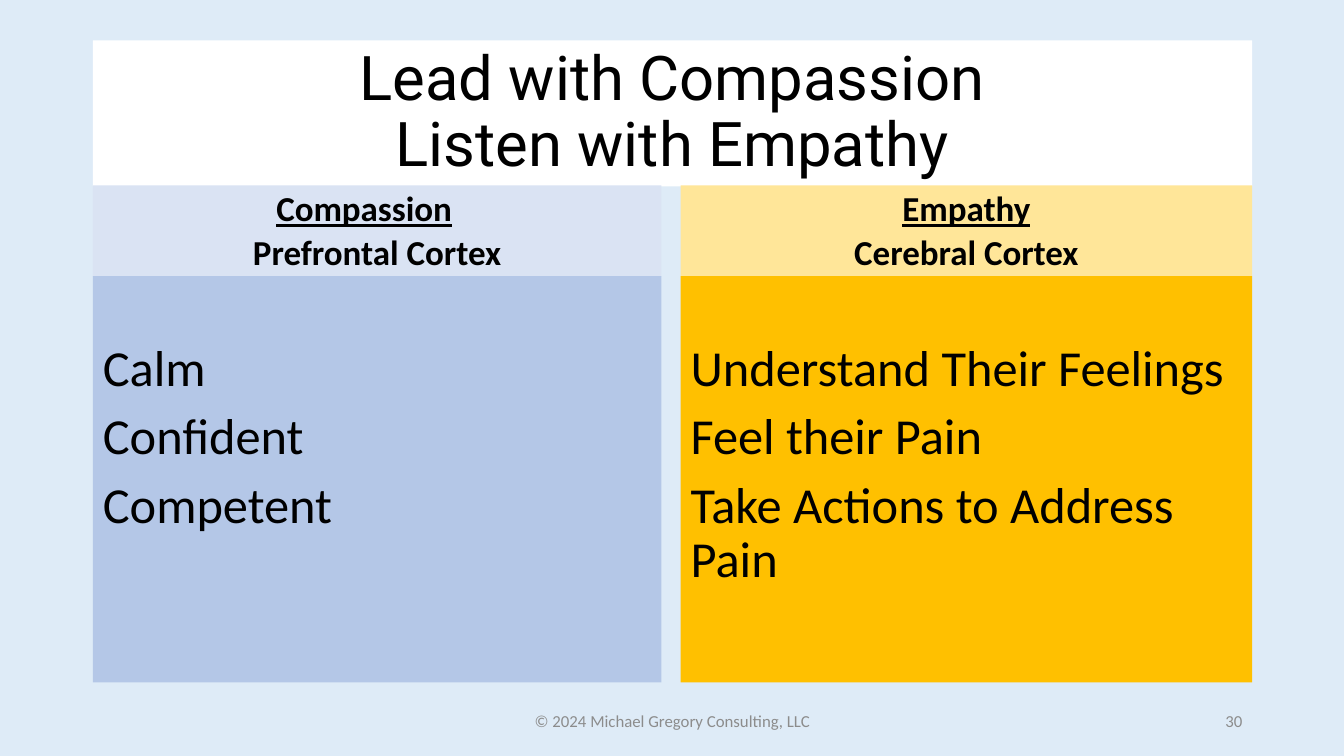
from dataclasses import dataclass

from lxml import etree
from pptx import Presentation
from pptx.dml.color import RGBColor
from pptx.enum.text import MSO_ANCHOR, MSO_AUTO_SIZE, PP_ALIGN
from pptx.oxml.ns import qn
from pptx.util import Inches, Pt

LEFT, CENTER, RIGHT = PP_ALIGN.LEFT, PP_ALIGN.CENTER, PP_ALIGN.RIGHT
TOP, MIDDLE, BOTTOM = MSO_ANCHOR.TOP, MSO_ANCHOR.MIDDLE, MSO_ANCHOR.BOTTOM
NO_FIT = MSO_AUTO_SIZE.NONE
COMPARE = 4  # layout with a title and two headed columns


@dataclass(frozen=True)
class Theme:
    back: str = "DEEBF7"
    white: str = "FFFFFF"
    ink: str = "000000"
    gray: str = "8C8C8C"
    blues: tuple = ("DAE3F3", "B4C7E7")
    golds: tuple = ("FFE699", "FFC000")
    title: int = 44
    head: int = 25
    body: int = 36
    foot: int = 12
    face: str = "Calibri"
    title_face: str = "Roboto"


THEME = Theme()

# Column: left, width, fills, heading lines, list items
COLUMNS = (
    (0.92, 5.64, THEME.blues, ("Compassion\t", "Prefrontal Cortex"),
     ("Calm", "Confident", "Competent")),
    (6.75, 5.67, THEME.golds, ("Empathy", "Cerebral Cortex"),
     ("Understand Their Feelings", "Feel their Pain",
      "Take Actions to Address Pain")),
)


def paint(item, color):
    item.fill.solid()
    item.fill.fore_color.rgb = RGBColor.from_string(color)


def place(shape, left, top, width, height):
    shape.left, shape.top = Inches(left), Inches(top)
    shape.width, shape.height = Inches(width), Inches(height)


def plain(para):
    """Drop the bullet and the hanging indent."""
    props = para._p.get_or_add_pPr()
    props.set("marL", "0")
    props.set("indent", "0")
    etree.SubElement(props, qn("a:buNone"))


def write(shape, lines, size, color=THEME.ink, face=THEME.face, align=LEFT,
          anchor=TOP, bold=False, under=False, pitch=1.0, gap=0, inset=0.05):
    """Fill a shape with paragraphs; under marks the first one only."""
    frame = shape.text_frame
    frame.word_wrap = True
    frame.auto_size = NO_FIT
    frame.vertical_anchor = anchor
    frame.margin_top = Inches(inset)
    for i, line in enumerate(lines):
        para = frame.add_paragraph() if i else frame.paragraphs[0]
        plain(para)
        para.text = line
        para.alignment = align
        para.line_spacing = pitch
        para.space_before = Pt(gap if i else 0)
        for run in para.runs:
            font = run.font
            font.name, font.size, font.bold = face, Pt(size), bold
            font.underline = under and i == 0
            font.color.rgb = RGBColor.from_string(color)


def add_title(slide):
    title = slide.shapes.title
    place(title, 0.92, 0.4, 11.5, 1.45)
    paint(title, THEME.white)
    write(title, ["Lead with Compassion\vListen with Empathy"], THEME.title,
          face=THEME.title_face, align=CENTER, anchor=MIDDLE, pitch=0.9)


def add_column(head, body, left, width, fills, names, items):
    place(head, left, 1.84, width, 0.9)
    place(body, left, 2.74, width, 4.03)
    for shape, fill in zip((head, body), fills):
        paint(shape, fill)
    write(head, names, THEME.head, align=CENTER, anchor=BOTTOM, bold=True,
          under=True, pitch=0.7, gap=10)
    write(body, items, THEME.body, pitch=0.9, gap=10, inset=0.66)


def add_note(slide, text, left, width, align):
    box = slide.shapes.add_textbox(0, 0, 0, 0)
    place(box, left, 6.95, width, 0.4)
    write(box, [text], THEME.foot, color=THEME.gray, align=align,
          anchor=MIDDLE)


def main():
    deck = Presentation()
    deck.slide_width, deck.slide_height = Inches(13.33), Inches(7.5)
    slide = deck.slides.add_slide(deck.slide_layouts[COMPARE])
    paint(slide.background, THEME.back)

    # Title and the two columns
    add_title(slide)
    holders = slide.placeholders
    for i, column in enumerate(COLUMNS):
        add_column(holders[2 * i + 1], holders[2 * i + 2], *column)

    # Footer
    add_note(slide, "© 2024 Michael Gregory Consulting, LLC", 4.42, 4.5, CENTER)
    add_note(slide, "30", 9.42, 3, RIGHT)
    deck.save("out.pptx")


if __name__ == "__main__":
    main()
